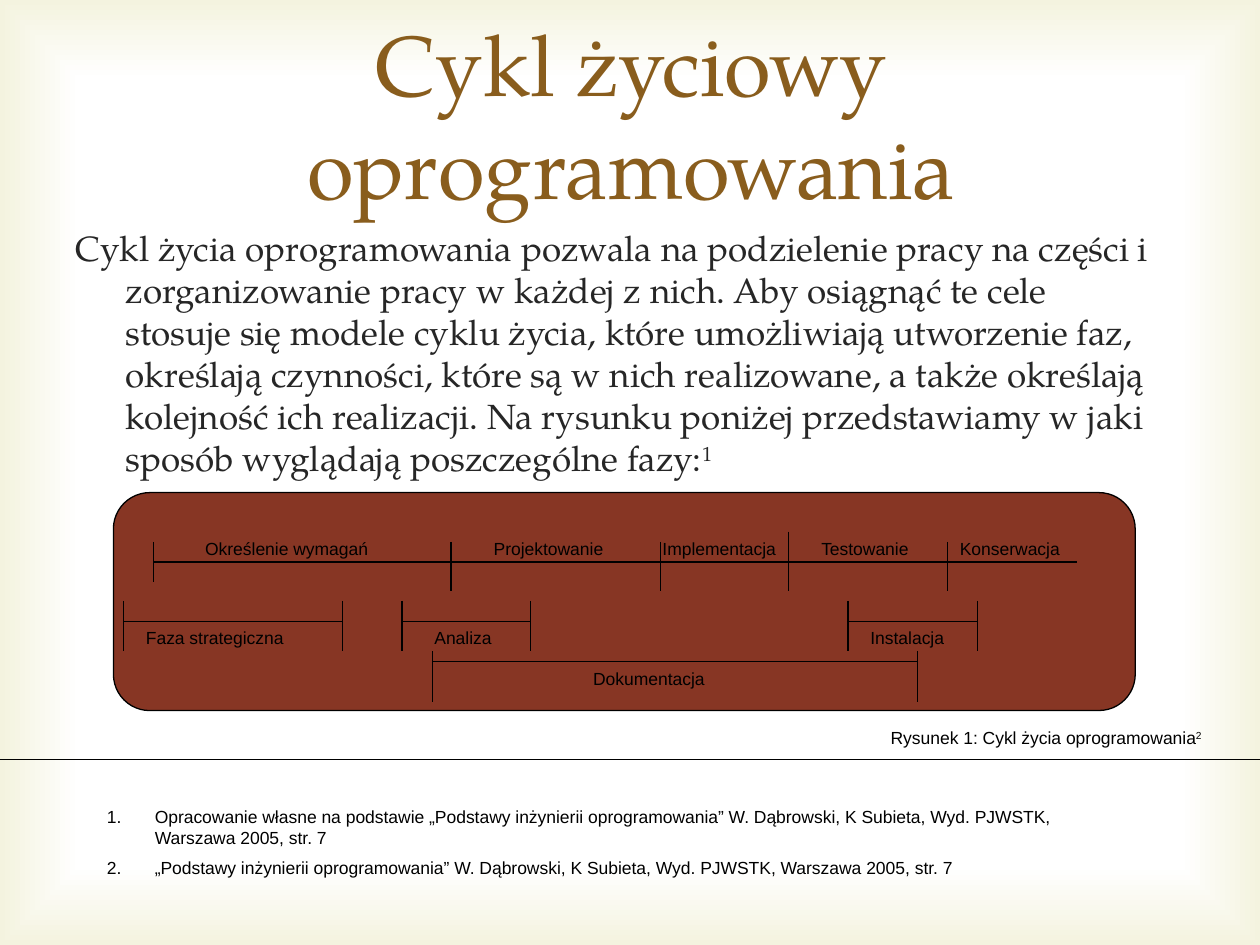
from lxml import etree
from pptx import Presentation
from pptx.dml.color import RGBColor
from pptx.enum.shapes import MSO_CONNECTOR as CONNECTOR, MSO_SHAPE as SHAPE
from pptx.enum.text import MSO_ANCHOR as ANCHOR, PP_ALIGN as ALIGN
from pptx.oxml.ns import qn
from pptx.util import Inches, Pt

COLORS = {"black": "000000", "title": "895D1D", "body": "262626",
          "panel": "873624", "white": "FFFFFF", "edge": "F4F3DF"}
SERIF, SANS = "TeX Gyre Pagella", "Arial"

TITLE = "Cykl życiowy oprogramowania"
BODY = ("Cykl życia oprogramowania pozwala na podzielenie pracy na części i "
        "zorganizowanie pracy w każdej z nich. Aby osiągnąć te cele stosuje się "
        "modele cyklu życia, które umożliwiają utworzenie faz, określają czynności, "
        "które są w nich realizowane, a także określają kolejność ich realizacji. "
        "Na rysunku poniżej przedstawiamy w jaki sposób wyglądają poszczególne fazy:")
CAPTION = "Rysunek 1: Cykl życia oprogramowania"
NOTES = [
    "Opracowanie własne na podstawie „Podstawy inżynierii oprogramowania” "
    "W. Dąbrowski, K Subieta, Wyd. PJWSTK, Warszawa 2005, str. 7",
    "„Podstawy inżynierii oprogramowania” W. Dąbrowski, K Subieta, Wyd. PJWSTK, "
    "Warszawa 2005, str. 7",
]

AXIS_Y, AXIS_START, AXIS_END = 4.46, 1.22, 8.55
AXIS_TICKS = [(1.22, 4.3, 4.62), (3.58, 4.3, 4.69), (5.24, 4.3, 4.69),
              (6.26, 4.22, 4.69), (7.52, 4.3, 4.69)]
AXIS_LABELS = [("Określenie wymagań", 1.53, 2.2), ("Projektowanie", 3.82, 2.2),
               ("Implementacja", 5.16, 1.34), ("Testowanie", 6.42, 2.2),
               ("Konserwacja", 7.52, 2.2)]
SPANS = [("Faza strategiczna", 0.98, 2.72, 4.93, 0.16, 1.06),
         ("Analiza", 3.19, 4.21, 4.93, 0.16, 3.35),
         ("Instalacja", 6.73, 7.76, 4.93, 0.16, 6.81),
         ("Dokumentacja", 3.43, 7.28, 5.25, 0.08, 4.61)]
TICK_HEIGHT = 0.4
LABEL_HEIGHT = 0.27


def color(name):
    return RGBColor.from_string(COLORS[name])


def set_all(target, **values):
    for name, value in values.items():
        setattr(target, name, value)


def add_run(paragraph, text, size, font, color_name, raised=False):
    run = paragraph.add_run()
    run.text = text
    set_all(run.font, size=Pt(size), name=font)
    run.font.color.rgb = color(color_name)
    if raised:
        run.font._element.set("baseline", "30000")


def hang(paragraph, indent):
    properties = paragraph._p.get_or_add_pPr()
    properties.set("marL", str(Inches(indent)))
    properties.set("indent", str(-Inches(indent)))
    return properties


def add_text(slide, box, wrap=True):
    shape = slide.shapes.add_textbox(*map(Inches, box))
    shape.text_frame.word_wrap = wrap
    return shape.text_frame


def add_label(slide, text, left, top, width):
    paragraph = add_text(slide, (left, top, width, LABEL_HEIGHT)).paragraphs[0]
    paragraph.space_before = Pt(5)
    add_run(paragraph, text, 10, SANS, "black")


def add_line(slide, *ends):
    line = slide.shapes.add_connector(CONNECTOR.STRAIGHT, *map(Inches, ends))
    line.line.color.rgb = color("black")
    line.line.width = Pt(0.75)
    etree.SubElement(line._element.spPr, qn("a:effectLst"))


def add_backdrop(slide):
    shape = slide.shapes.add_shape(SHAPE.RECTANGLE, 0, 0, Inches(10), Inches(7.5))
    shape.shadow.inherit = False
    shape.line.fill.background()
    shape.fill.gradient()
    for stop, position, name in zip(shape.fill.gradient_stops, (0.83, 1), ("white", "edge")):
        stop.position = position
        stop.color.rgb = color(name)
    gradient = shape._element.spPr.find(qn("a:gradFill"))
    gradient.remove(gradient.find(qn("a:lin")))
    shading = etree.Element(qn("a:path"), {"path": "rect"})
    etree.SubElement(shading, qn("a:fillToRect"), dict.fromkeys("ltrb", "50000"))
    gradient.find(qn("a:gsLst")).addnext(shading)
    slide.shapes._spTree.insert(2, shape._element)


def add_title(slide):
    title = slide.shapes.title
    set_all(title, left=Inches(0.51), top=Inches(0.28), width=Inches(9), height=Inches(1.25))
    set_all(title.text_frame, word_wrap=True, vertical_anchor=ANCHOR.MIDDLE)
    paragraph = title.text_frame.paragraphs[0]
    paragraph.alignment = ALIGN.CENTER
    add_run(paragraph, TITLE, 48.6, SERIF, "title")


def add_body(slide):
    paragraph = add_text(slide, (0.5, 1.75, 8.75, 2.63)).paragraphs[0]
    paragraph.space_before = Pt(4)
    hang(paragraph, 0.4)
    add_run(paragraph, BODY, 20, SERIF, "body")
    add_run(paragraph, "1", 20, SERIF, "body", raised=True)


def add_diagram(slide):
    panel = slide.shapes.add_shape(SHAPE.FLOWCHART_ALTERNATE_PROCESS,
                                   *map(Inches, (0.9, 3.91, 8.11, 1.73)))
    panel.shadow.inherit = False
    panel.fill.solid()
    panel.fill.fore_color.rgb = color("panel")
    panel.line.color.rgb = color("black")
    panel.line.width = Pt(0.75)
    add_line(slide, AXIS_START, AXIS_Y, AXIS_END, AXIS_Y)
    for x, top, bottom in AXIS_TICKS:
        add_line(slide, x, top, x, bottom)
    for text, left, width in AXIS_LABELS:
        add_label(slide, text, left, 4.22, width)
    for text, start, end, y, rise, label_left in SPANS:
        add_line(slide, start, y, end, y)
        for x in (start, end):
            add_line(slide, x, y - rise, x, y - rise + TICK_HEIGHT)
        add_label(slide, text, label_left, y, 1.5)


def add_footer(slide):
    caption = add_text(slide, (6.97, 5.72, 2.68, LABEL_HEIGHT), wrap=False).paragraphs[0]
    add_run(caption, CAPTION, 10, SANS, "black")
    add_run(caption, "2", 10, SANS, "black", raised=True)
    frame = add_text(slide, (0.75, 6.35, 8.35, 0.93))
    for index, note in enumerate(NOTES):
        paragraph = frame.add_paragraph() if index else frame.paragraphs[0]
        paragraph.space_before = Pt(5)
        etree.SubElement(hang(paragraph, 0.38), qn("a:buAutoNum"), type="arabicPeriod")
        add_run(paragraph, note, 10, SANS, "black")
    add_line(slide, 0, 6.03, 10, 6.03)


def main():
    presentation = Presentation()
    set_all(presentation, slide_width=Inches(10), slide_height=Inches(7.5))
    slide = presentation.slides.add_slide(presentation.slide_layouts[5])
    add_backdrop(slide)
    add_title(slide)
    add_body(slide)
    add_diagram(slide)
    add_footer(slide)
    presentation.save("out.pptx")


if __name__ == "__main__":
    main()
